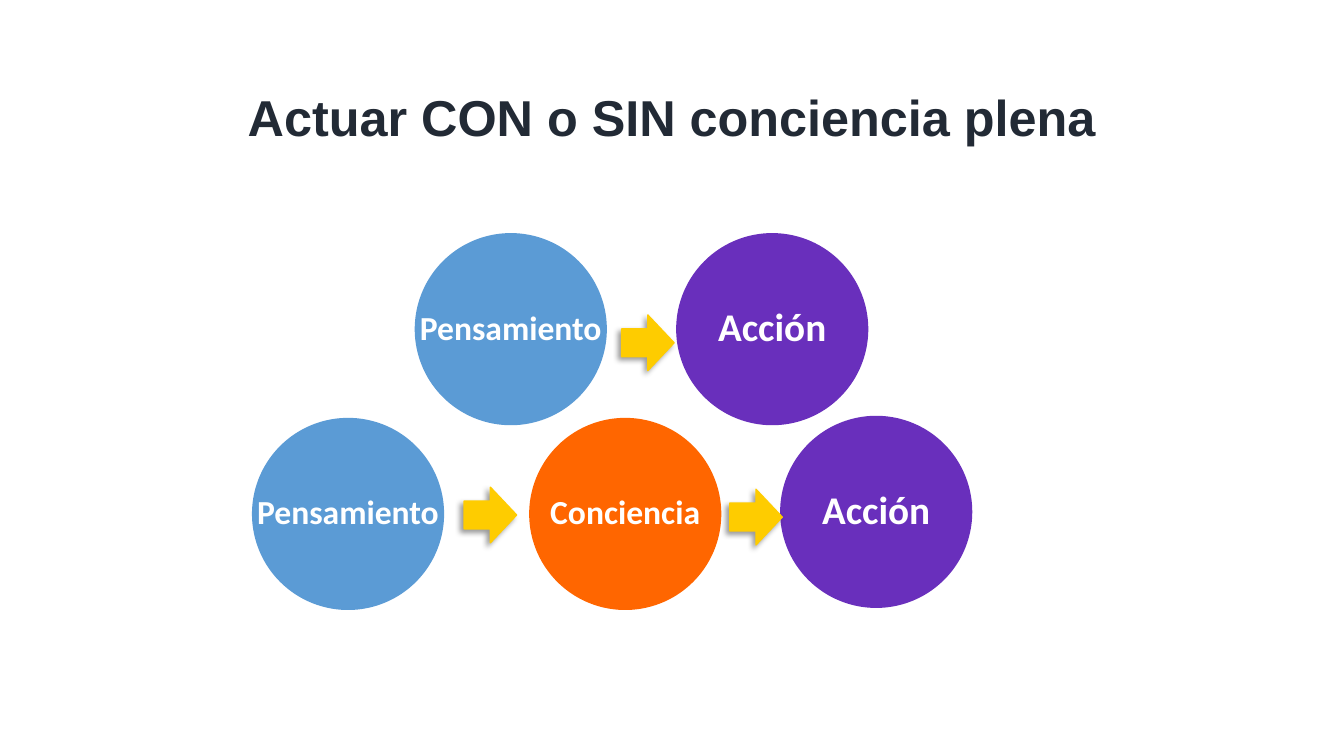
from dataclasses import dataclass

from lxml import etree
from pptx import Presentation, util as u
from pptx.dml.color import RGBColor
from pptx.enum import shapes, text
from pptx.oxml.ns import qn
from pptx.slide import Slide

COLORS = {
    "title": "222A35",
    "thought": "5B9BD5",
    "awareness": "FF6600",
    "action": "692FBC",
    "arrow": "FECC00",
    "arrow_line": "FFCC00",
    "label": "FFFFFF",
    "shadow": "000000",
}
CIRCLE_SIZE = 183
ARROW_WIDTH, ARROW_HEIGHT = 50, 53


@dataclass(frozen=True)
class Circle:
    left: int
    top: int
    label: str
    color: str
    font_size: int = 24


@dataclass(frozen=True)
class Arrow:
    left: int
    top: int


# Back to front: the last arrow overlaps the action circle
DIAGRAM = [
    # Without awareness
    Circle(395, 222, "Pensamiento", "thought"),
    Circle(644, 222, "Acción", "action", 28),
    Arrow(592, 300),
    # With awareness
    Circle(240, 398, "Pensamiento", "thought"),
    Circle(743, 396, "Acción", "action", 28),
    Arrow(442, 464),
    Circle(504, 398, "Conciencia", "awareness"),
    Arrow(695, 466),
]


def px(value: int) -> u.Emu:
    return u.Emu(value * 9525)


def rgb(name: str) -> RGBColor:
    return RGBColor.from_string(COLORS[name])


def add_label(frame, label: str, font: str, size: int, color: str) -> None:
    paragraph = frame.paragraphs[0]
    paragraph.alignment = text.PP_ALIGN.CENTER
    paragraph.line_spacing = 0.9
    run = paragraph.add_run()
    run.text = label
    run.font.name = font
    run.font.size = u.Pt(size)
    run.font.bold = True
    run.font.color.rgb = rgb(color)


def set_margins(frame, margin: int) -> None:
    frame.margin_left = frame.margin_right = px(margin)
    frame.margin_top = frame.margin_bottom = px(margin)


def add_title(slide: Slide, label: str) -> None:
    title = slide.shapes.title
    title.left, title.top, title.width, title.height = map(px, (166, 60, 948, 90))
    frame = title.text_frame
    frame.word_wrap = True
    frame.auto_size = text.MSO_AUTO_SIZE.NONE
    frame.vertical_anchor = text.MSO_ANCHOR.BOTTOM
    set_margins(frame, 10)
    add_label(frame, label, "Arial", 36, "title")
    frame.paragraphs[0].line_spacing = 1.0


def add_circle(slide: Slide, circle: Circle) -> None:
    shape = slide.shapes.add_shape(
        shapes.MSO_SHAPE.OVAL, px(circle.left), px(circle.top), px(CIRCLE_SIZE), px(CIRCLE_SIZE)
    )
    shape.shadow.inherit = False
    shape.fill.solid()
    shape.fill.fore_color.rgb = rgb(circle.color)
    shape.line.fill.background()
    frame = shape.text_frame
    frame.word_wrap = False
    frame.vertical_anchor = text.MSO_ANCHOR.MIDDLE
    set_margins(frame, 1)
    add_label(frame, circle.label, "Calibri", circle.font_size, "label")


def add_arrow(slide: Slide, arrow: Arrow) -> None:
    shape = slide.shapes.add_shape(
        shapes.MSO_SHAPE.RIGHT_ARROW, px(arrow.left), px(arrow.top), px(ARROW_WIDTH), px(ARROW_HEIGHT)
    )
    shape.fill.solid()
    shape.fill.fore_color.rgb = rgb("arrow")
    shape.line.color.rgb = rgb("arrow_line")
    shape.line.width = u.Pt(1)
    # Soft shadow towards the lower left
    shape.shadow.inherit = False
    effects = shape.element.spPr.find(qn("a:effectLst"))
    shadow = etree.SubElement(
        effects, qn("a:outerShdw"), blurRad=str(u.Pt(4)), dist=str(u.Pt(3)),
        dir=str(135 * 60000), algn="tr", rotWithShape="0",
    )
    color = etree.SubElement(shadow, qn("a:srgbClr"), val=COLORS["shadow"])
    etree.SubElement(color, qn("a:alpha"), val="40000")


def main() -> None:
    presentation = Presentation()
    presentation.slide_width, presentation.slide_height = px(1280), px(720)
    slide = presentation.slides.add_slide(presentation.slide_layouts.get_by_name("Title Only"))
    add_title(slide, "Actuar CON o SIN conciencia plena")
    for element in DIAGRAM:
        if isinstance(element, Circle):
            add_circle(slide, element)
        else:
            add_arrow(slide, element)
    presentation.save("out.pptx")


if __name__ == "__main__":
    main()
